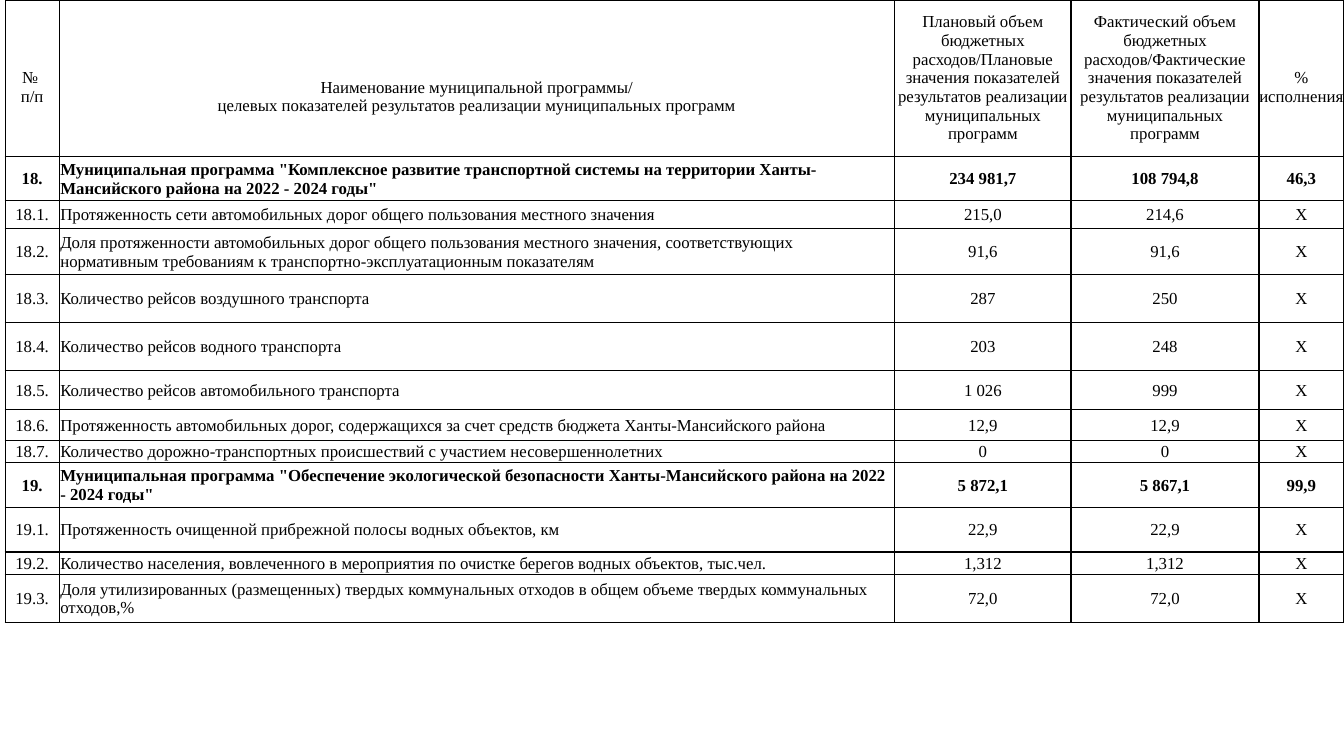
import lxml.etree
import pptx
import pptx.dml.color
import pptx.enum.text
import pptx.oxml.ns
import pptx.util
from pptx.util import Cm

BLACK = "000000"
CENTER = pptx.enum.text.PP_ALIGN.CENTER
LEFT = pptx.enum.text.PP_ALIGN.LEFT


def write(cell, text, align=CENTER, bold=False, size=12, color=BLACK, inset=0, top=0):
    """Put one paragraph per line of text; a vertical tab breaks a line inside it."""
    cell.vertical_anchor = pptx.enum.text.MSO_ANCHOR.MIDDLE
    cell.margin_left = cell.margin_right = Cm(inset)
    cell.margin_top, cell.margin_bottom = Cm(top), 0
    cell.text = text
    for paragraph in cell.text_frame.paragraphs:
        paragraph.alignment = align
        for run in paragraph.runs:
            run.font.name = "Times New Roman"
            run.font.size = pptx.util.Pt(size)
            run.font.bold = bold
            run.font.color.rgb = pptx.dml.color.RGBColor.from_string(color)


def outline(cell, color=BLACK, width=1):
    properties = cell._tc.get_or_add_tcPr()
    for side in ("a:lnL", "a:lnR", "a:lnT", "a:lnB"):
        line = lxml.etree.SubElement(properties, pptx.oxml.ns.qn(side), w=str(pptx.util.Pt(width)))
        fill = lxml.etree.SubElement(line, pptx.oxml.ns.qn("a:solidFill"))
        lxml.etree.SubElement(fill, pptx.oxml.ns.qn("a:srgbClr"), val=color)


# Heading text and the top margin that lowers it
headings = [
    ("№ \vп/п", 0.47),
    ("Наименование муниципальной программы/\n"
     "целевых показателей результатов реализации муниципальных программ", 0.94),
    ("Плановый объем бюджетных расходов/Плановые значения показателей "
     "результатов реализации муниципальных программ", 0),
    ("Фактический объем бюджетных расходов/Фактические значения показателей "
     "результатов реализации муниципальных программ", 0),
    ("% исполнения", 0.47),
]

# Row height in cm, number, name, planned, actual, percent done
indicators = [
    (1.12, "18.", 'Муниципальная программа "Комплексное развитие транспортной системы '
     'на территории Ханты-Мансийского района на 2022 - 2024 годы"', "234 981,7", "108 794,8", "46,3"),
    (0.7, "18.1.", "Протяженность сети автомобильных дорог общего пользования местного значения",
     "215,0", "214,6", "Х"),
    (1.16, "18.2.", "Доля протяженности автомобильных дорог общего пользования местного значения, "
     "соответствующих нормативным требованиям к транспортно-эксплуатационным показателям",
     "91,6", "91,6", "Х"),
    (1.21, "18.3.", "Количество рейсов воздушного транспорта", "287", "250", "Х"),
    (1.21, "18.4.", "Количество рейсов водного транспорта", "203", "248", "Х"),
    (0.98, "18.5.", "Количество рейсов автомобильного транспорта", "1 026", "999", "Х"),
    (0.78, "18.6.", "Протяженность автомобильных дорог, содержащихся за счет средств бюджета "
     "Ханты-Мансийского района", "12,9", "12,9", "Х"),
    (0.56, "18.7.", "Количество дорожно-транспортных происшествий с участием несовершеннолетних",
     "0", "0", "Х"),
    (1.12, "19.", 'Муниципальная программа "Обеспечение экологической безопасности '
     'Ханты-Мансийского района на 2022 - 2024 годы"', "5 872,1", "5 867,1", "99,9"),
    (1.13, "19.1.", "Протяженность очищенной прибрежной полосы водных объектов, км",
     "22,9", "22,9", "Х"),
    (0.56, "19.2.", "Количество населения, вовлеченного в мероприятия по очистке берегов "
     "водных объектов, тыс.чел.", "1,312", "1,312", "Х"),
    (1.21, "19.3.", "Доля утилизированных (размещенных) твердых коммунальных отходов в общем объеме "
     "твердых коммунальных отходов,%", "72,0", "72,0", "Х"),
]
column_widths = [1.36, 21.06, 4.44, 4.74, 2.13]
row_heights = [3.94] + [indicator[0] for indicator in indicators]

presentation = pptx.Presentation()
presentation.slide_width, presentation.slide_height = Cm(33.87), Cm(19.05)
slide = presentation.slides.add_slide(presentation.slide_layouts[6])

programs = slide.shapes.add_table(
    len(row_heights), len(column_widths),
    Cm(0.13), 0, Cm(sum(column_widths)), Cm(sum(row_heights)),
).table
programs.first_row = programs.horz_banding = False
for column, width in zip(programs.columns, column_widths):
    column.width = Cm(width)
for row, height in zip(programs.rows, row_heights):
    row.height = Cm(height)

for column, (heading, top) in enumerate(headings):
    write(programs.cell(0, column), heading, top=top)

for row, (_, *values) in enumerate(indicators, start=1):
    is_program = values[0].count(".") == 1
    for column, value in enumerate(values):
        write(programs.cell(row, column), value, align=LEFT if column == 1 else CENTER,
              bold=is_program, inset=0.03, top=0.03)

for cell in programs.iter_cells():
    outline(cell)
    cell.fill.background()

presentation.save("out.pptx")
